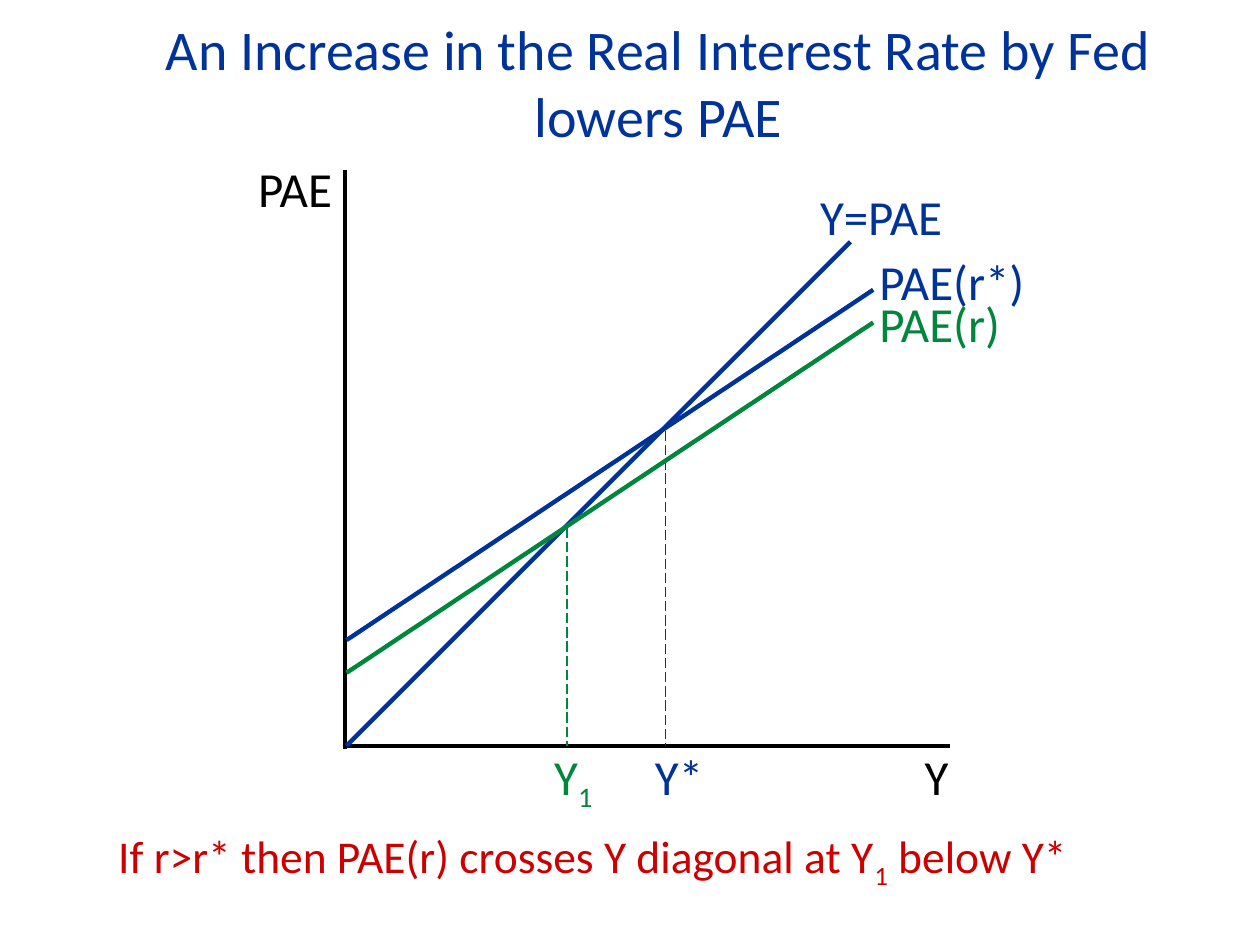
import pptx
import pptx.dml.color
import pptx.enum.dml
import pptx.enum.shapes
import pptx.enum.text
import pptx.oxml.ns
import pptx.util
from lxml import etree

Pt = pptx.util.Pt
ANCHOR = pptx.enum.text.MSO_ANCHOR

COLORS = {"blue": "003399", "green": "00863D", "red": "CC0000", "black": "000000"}
FONT = "Calibri"

# Diagram geometry in points
ORIGIN_X, AXIS_Y = 198, 426.2
LABEL_Y = 422.8
LABEL_HEIGHT = 41


def rgb(name):
    return pptx.dml.color.RGBColor.from_string(COLORS[name])


def format_span(span, size, color):
    span.font.name = FONT
    span.font.size = Pt(size)
    span.font.color.rgb = rgb(color)


def add_title(page, text):
    title = page.shapes.title
    title.left, title.top, title.width, title.height = Pt(52.5), Pt(4.3), Pt(647.3), Pt(85)
    frame = title.text_frame
    frame.text = text
    frame.word_wrap = True
    frame.vertical_anchor = ANCHOR.MIDDLE
    para = frame.paragraphs[0]
    para.alignment = pptx.enum.text.PP_ALIGN.CENTER
    format_span(para.runs[0], 32, "blue")


def add_text(page, left, top, width, parts, color, size=28, height=LABEL_HEIGHT,
             anchor=ANCHOR.TOP, spacing=None):
    """Parts alternate between normal text and subscript."""
    box = page.shapes.add_textbox(Pt(left), Pt(top), Pt(width), Pt(height))
    box.text_frame.word_wrap = True
    box.text_frame.vertical_anchor = anchor
    para = box.text_frame.paragraphs[0]
    if spacing:
        para.line_spacing = spacing
    for index, part in enumerate(parts):
        span = para.add_run()
        span.text = part
        format_span(span, size, color)
        if index % 2:
            span.font._element.set("baseline", "-25000")


def add_line(page, start, end, color, width=2.5, dashed=False):
    line = page.shapes.add_connector(
        pptx.enum.shapes.MSO_CONNECTOR.STRAIGHT,
        Pt(start[0]), Pt(start[1]), Pt(end[0]), Pt(end[1]))
    line.line.color.rgb = rgb(color)
    line.line.width = Pt(width)
    if dashed:
        line.line.dash_style = pptx.enum.dml.MSO_LINE.LONG_DASH
    etree.SubElement(line._element.spPr, pptx.oxml.ns.qn("a:effectLst"))


def add_expenditure_line(page, intercept, color):
    """Both expenditure lines share one slope."""
    add_line(page, (ORIGIN_X, intercept), (499, intercept - 200.2), color)


def add_drop_line(page, x, top, color):
    add_line(page, (x, top), (x, AXIS_Y), color, width=0.75, dashed=True)


def main():
    deck = pptx.Presentation()
    deck.slide_width, deck.slide_height = Pt(720), Pt(540)
    page = deck.slides.add_slide(deck.slide_layouts[5])

    add_title(page, "An Increase in the Real Interest Rate by Fed lowers PAE")

    # Axes
    add_line(page, (197.3, 97.2), (197.3, 428.2), "black")
    add_line(page, (197.3, AXIS_Y), (543, AXIS_Y), "black")
    add_text(page, 140.4, 93.6, 59, ["PAE"], "black", height=35.3, spacing=0.8)
    add_text(page, 521.3, LABEL_Y, 35.3, ["Y"], "black")

    # Expenditure at r* and the diagonal
    add_expenditure_line(page, 365.8, "blue")
    add_text(page, 495.4, 140.4, 105, ["PAE(r*)"], "blue")
    add_line(page, (ORIGIN_X, AXIS_Y), (486, 138.2), "blue")
    add_text(page, 461.5, 103, 90, ["Y=PAE"], "blue")
    add_drop_line(page, 380.2, 246.2, "blue")
    add_text(page, 367.2, LABEL_Y, 47.5, ["Y*"], "blue")

    # Expenditure at the higher rate r
    add_expenditure_line(page, 384.5, "green")
    add_text(page, 495.4, 164.2, 116.6, ["PAE(r)"], "green")
    add_drop_line(page, 324, 301.7, "green")
    add_text(page, 309.6, LABEL_Y, 47.5, ["Y", "1"], "green")

    # Conclusion
    add_text(page, 60.5, 471.6, 619.2,
             ["If r>r* then PAE(r) crosses Y diagonal at Y", "1", " below Y*"],
             "red", size=26, height=38.9, anchor=ANCHOR.MIDDLE)

    deck.save("out.pptx")


if __name__ == "__main__":
    main()
